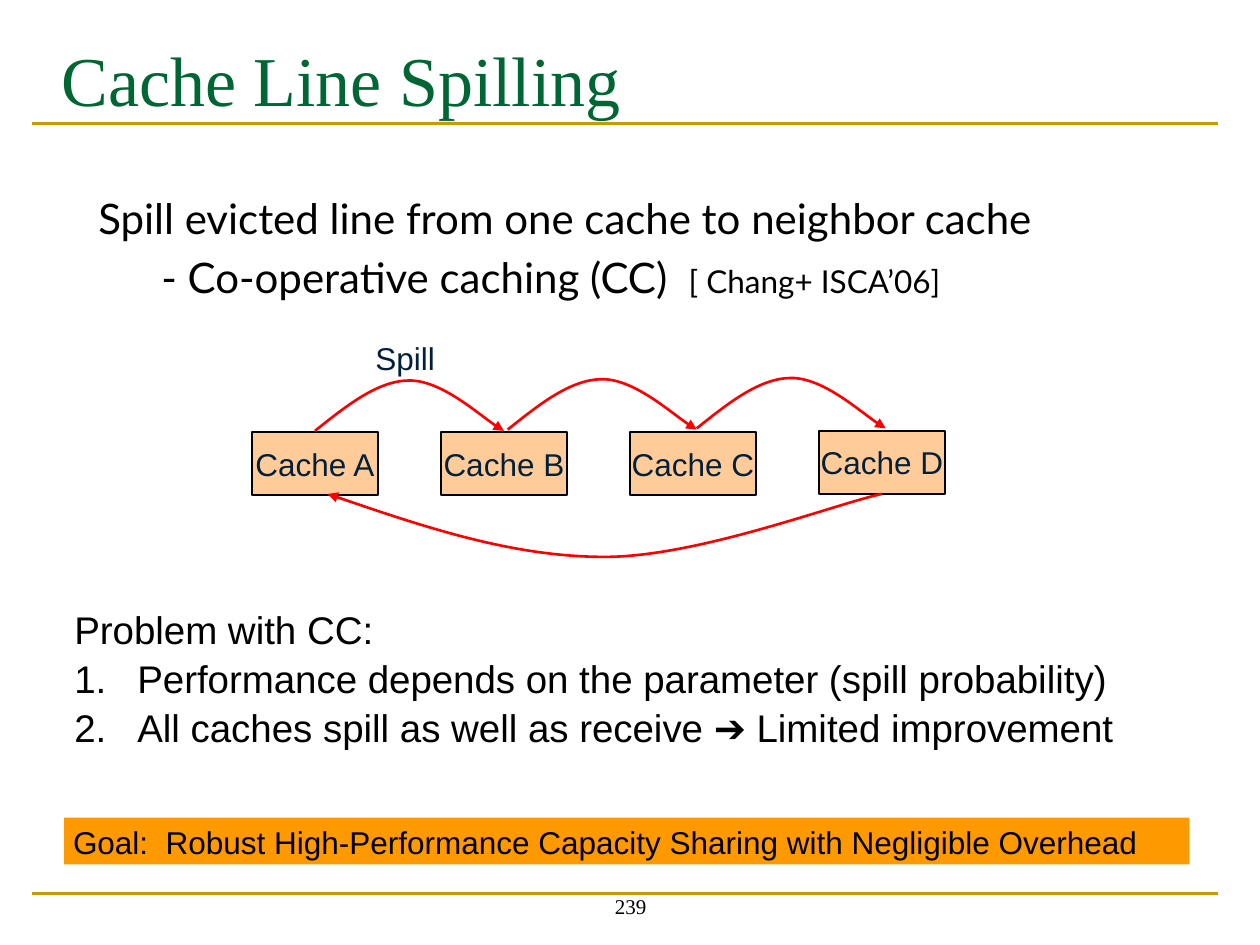
from dataclasses import dataclass

from lxml.etree import SubElement
from pptx import Presentation
from pptx.dml.color import RGBColor
from pptx.enum.shapes import MSO_CONNECTOR as Connector, MSO_SHAPE as Shape
from pptx.enum.text import MSO_ANCHOR as Anchor, MSO_AUTO_SIZE as AutoSize, PP_ALIGN as Align
from pptx.oxml.ns import qn
from pptx.util import Inches, Pt

INK = "02203A"
BLACK = "000000"


@dataclass
class Box:
    x: float
    y: float
    w: float
    h: float


@dataclass
class Cache:
    name: str
    box: Box


@dataclass
class Curve:
    x: float
    y: float
    offsets: list[tuple[float, float]]
    end: str = "tailEnd"


def rgb(color: str) -> RGBColor:
    return RGBColor.from_string(color)


def area(b: Box) -> list[int]:
    return [Inches(v) for v in (b.x, b.y, b.w, b.h)]


def move(sp, b: Box) -> None:
    sp.left, sp.top, sp.width, sp.height = area(b)


def format_text(tf, font: str, size: float, color: str, align=Align.LEFT) -> None:
    for p in tf.paragraphs:
        p.alignment = align
        for r in p.runs:
            r.font.name = font
            r.font.size = Pt(size)
            r.font.color.rgb = rgb(color)


def set_frame(tf, anchor=Anchor.TOP, wrap: bool = False) -> None:
    tf.word_wrap = wrap
    tf.vertical_anchor = anchor
    tf.margin_left = tf.margin_right = Inches(0.07)
    tf.margin_top = tf.margin_bottom = Inches(0.04)


def hang(p, bullet: str) -> None:
    pPr = p._p.get_or_add_pPr()
    pPr.set("marL", str(Inches(0.5)))
    pPr.set("indent", str(-Inches(0.5)))
    if bullet == "buAutoNum":
        SubElement(pPr, qn("a:buFont"), typeface="+mj-lt")
    bu = SubElement(pPr, qn(f"a:{bullet}"))
    if bullet == "buAutoNum":
        bu.set("type", "arabicPeriod")


def add_rule(s, y: float) -> None:
    line = s.shapes.add_connector(
        Connector.STRAIGHT, Inches(0.25), Inches(y), Inches(9.67), Inches(y))
    line.line.color.rgb = rgb("CC9900")
    line.line.width = Pt(1.5)
    SubElement(line.element.spPr, qn("a:effectLst"))


def add_rect(s, b: Box, fill: str):
    sp = s.shapes.add_shape(Shape.RECTANGLE, *area(b))
    sp.shadow.inherit = False
    sp.fill.solid()
    sp.fill.fore_color.rgb = rgb(fill)
    sp.line.fill.background()
    return sp


def add_cache(s, cache: Cache) -> None:
    sp = add_rect(s, cache.box, "FFCC99")
    sp.line.color.rgb = rgb(BLACK)
    sp.line.width = Pt(1)
    tf = sp.text_frame
    set_frame(tf, Anchor.MIDDLE)
    tf.text = cache.name
    format_text(tf, "Arial", 18, INK, Align.CENTER)


def add_curve(s, curve: Curve) -> None:
    builder = s.shapes.build_freeform(Inches(curve.x), Inches(curve.y))
    builder.add_line_segments(
        [(Inches(curve.x + dx), Inches(curve.y + dy)) for dx, dy in curve.offsets],
        close=False)
    sp = builder.convert_to_shape()
    sp.shadow.inherit = False
    sp.fill.background()
    sp.line.color.rgb = rgb("FF0000")
    sp.line.width = Pt(1.5)
    spPr = sp.element.spPr
    SubElement(spPr.find(qn("a:ln")), qn(f"a:{curve.end}"), type="triangle")
    path = spPr.find(".//" + qn("a:path"))
    segments = path.findall(qn("a:lnTo"))
    for i in range(0, len(segments), 3):
        bezier = SubElement(path, qn("a:cubicBezTo"))
        for segment in segments[i:i + 3]:
            bezier.append(segment[0])
            path.remove(segment)


def add_label(s, b: Box, text: str, font: str, size: float, color: str, anchor=Anchor.TOP) -> None:
    tf = s.shapes.add_textbox(*area(b)).text_frame
    set_frame(tf, anchor)
    tf.text = text
    format_text(tf, font, size, color, Align.CENTER)


def add_title(s) -> None:
    sp = s.shapes.title
    move(sp, Box(0.25, 0.17, 8.51, 0.49))
    tf = sp.text_frame
    tf.text = " Cache Line Spilling"
    tf.auto_size = AutoSize.NONE
    tf.vertical_anchor = Anchor.TOP
    tf.margin_top = Inches(0.12)
    format_text(tf, "Times New Roman", 40, "006633")


def add_body(s) -> None:
    sp = s.placeholders[1]
    move(sp, Box(0.68, 1.48, 9.02, 1.17))
    tf = sp.text_frame
    tf.text = ("Spill evicted line from one cache to neighbor cache\n"
               "\t- Co-operative caching (CC)  ")
    tf.auto_size = AutoSize.NONE
    citation = tf.paragraphs[1].add_run()
    citation.text = "[ Chang+ ISCA’06]"
    format_text(tf, "Lato", 24, BLACK)
    citation.font.size = Pt(18)
    for p in tf.paragraphs:
        hang(p, "buNone")


def add_problems(s) -> None:
    tf = s.shapes.add_textbox(*area(Box(0.52, 4.81, 8.97, 1.2))).text_frame
    set_frame(tf, wrap=True)
    tf.text = ("Problem with CC:\n"
               "Performance depends on the parameter (spill probability)\n"
               "All caches spill as well as receive ➔ Limited improvement")
    format_text(tf, "Arial", 22, BLACK)
    for i, p in enumerate(tf.paragraphs):
        p.line_spacing = 0.9
        p.space_before = Pt(4.4)
        hang(p, "buAutoNum" if i else "buNone")


def add_goal(s) -> None:
    tf = add_rect(s, Box(0.51, 6.49, 8.93, 0.37), "FF9900").text_frame
    set_frame(tf, wrap=True)
    tf.text = "Goal:  Robust High-Performance Capacity Sharing with Negligible Overhead"
    format_text(tf, "Arial", 18, BLACK)


def main() -> None:
    prs = Presentation()
    prs.slide_width, prs.slide_height = Inches(10), Inches(7.5)
    s = prs.slides.add_slide(prs.slide_layouts[1])
    for y in (7.09, 0.98):
        add_rule(s, y)
    add_label(s, Box(3.42, 6.83, 3.17, 0.5), "239", "Times New Roman", 12, BLACK, Anchor.BOTTOM)
    add_title(s)
    add_body(s)
    add_problems(s)
    for i, letter in enumerate("ABCD"):
        y = 3.42 if letter == "D" else 3.43
        add_cache(s, Cache(f"Cache {letter}", Box(2 + 1.5 * i, y, 1, 0.5)))
    hop = [(0.25, -0.2), (0.5, -0.4), (0.75, -0.4), (1, -0.4), (1.37, -0.07), (1.5, 0)]
    back = [(0.73, 0.25), (1.47, 0.5), (2.2, 0.5), (2.94, 0.5), (4.03, 0.08), (4.4, 0)]
    curves = [Curve(x, y, hop) for x, y in ((2.5, 3.42), (4.03, 3.41), (5.53, 3.4))]
    for curve in [*curves, Curve(2.6, 3.92, back, "headEnd")]:
        add_curve(s, curve)
    add_label(s, Box(2.89, 2.65, 0.65, 0.37), "Spill", "Arial", 18, INK)
    add_goal(s)
    prs.save("out.pptx")


if __name__ == "__main__":
    main()
